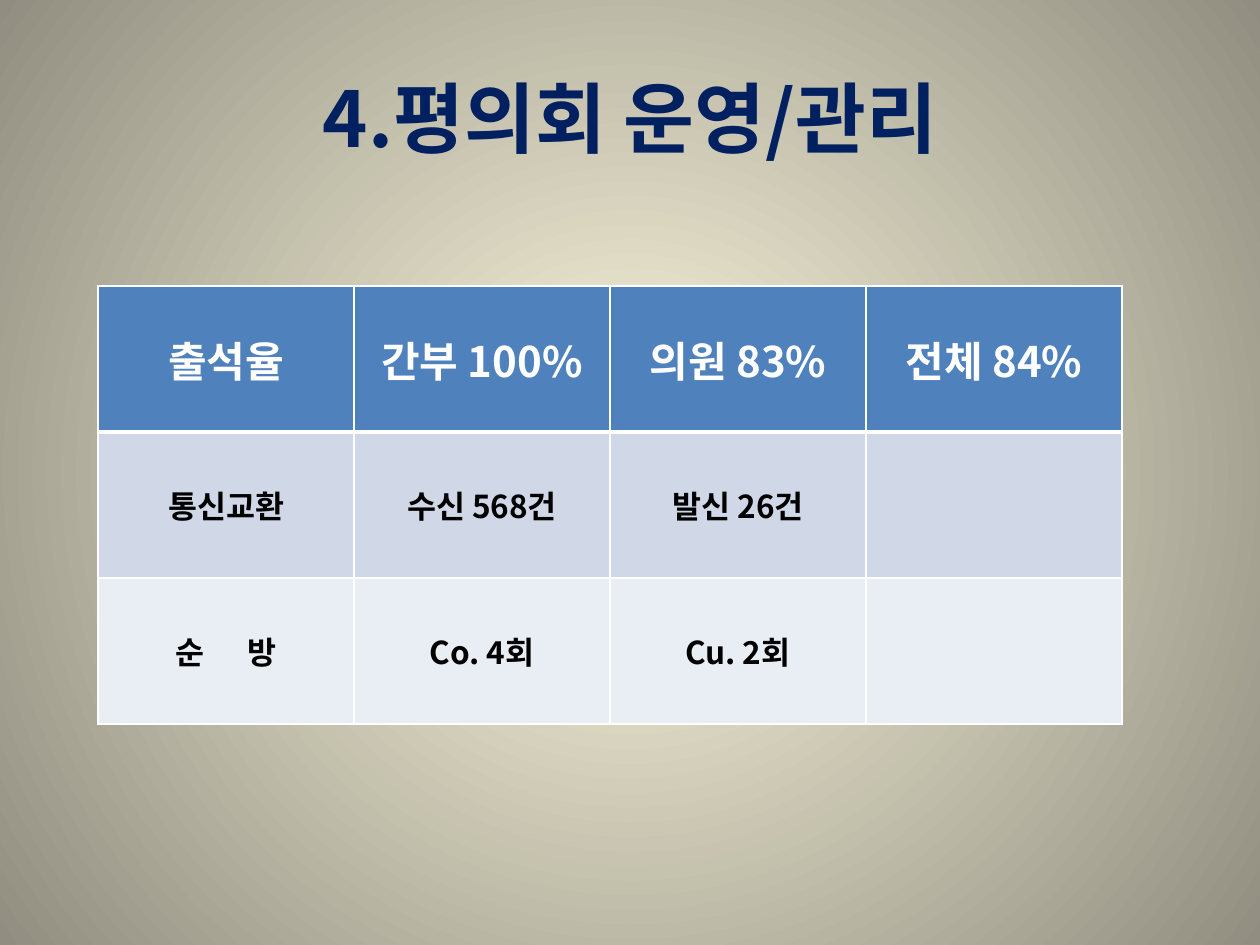
from dataclasses import dataclass

from lxml.etree import SubElement
from pptx import Presentation
from pptx.dml.color import RGBColor
from pptx.enum.text import MSO_ANCHOR, PP_ALIGN
from pptx.oxml.ns import qn
from pptx.util import Emu, Pt

FONT = "Noto Sans CJK KR"
NAVY = RGBColor(0x00, 0x20, 0x60)
BLUE = RGBColor(0x4F, 0x81, 0xBD)
PALE_BLUE = RGBColor(0xD0, 0xD8, 0xE8)
PALER_BLUE = RGBColor(0xE9, 0xED, 0xF4)
WHITE = RGBColor(0xFF, 0xFF, 0xFF)
BLACK = RGBColor(0x00, 0x00, 0x00)
CREAM = RGBColor(0xFC, 0xF7, 0xDD)
TAUPE = RGBColor(0x91, 0x8E, 0x81)

COLUMN_WIDTH, ROW_HEIGHT = 256, 146
WIDE_GAP = 20  # points added to the space inside a spread-out label


@dataclass(frozen=True)
class TextStyle:
    size: int
    color: RGBColor


@dataclass(frozen=True)
class TableRow:
    labels: tuple[str, ...]
    fill: RGBColor
    style: TextStyle
    top_border: int = 1
    bottom_border: int = 1


TITLE = TextStyle(44, NAVY)
HEADER = TextStyle(24, WHITE)
BODY = TextStyle(18, BLACK)

ROWS = (
    TableRow(("출석율", "간부 100%", "의원 83%", "전체 84%"), BLUE, HEADER, bottom_border=3),
    TableRow(("통신교환", "수신 568건", "발신 26건", ""), PALE_BLUE, BODY, top_border=3),
    TableRow(("순 방", "Co. 4회", "Cu. 2회", ""), PALER_BLUE, BODY),
)
SPREAD_LABELS = {"순 방"}


def px(length: int) -> Emu:
    return Emu(round(length * 914400 / 126))


def add_run(paragraph, text: str, style: TextStyle, spacing: int = 0) -> None:
    run = paragraph.add_run()
    run.text = text
    run.font.size = Pt(style.size)
    run.font.bold = True
    run.font.color.rgb = style.color
    run.font.name = FONT
    properties = run.font._element
    SubElement(properties, qn("a:ea")).set("typeface", FONT)
    if spacing:
        properties.set("spc", str(spacing * 100))


def write_label(paragraph, text: str, style: TextStyle) -> None:
    """Write centred text, widening the space in spread-out labels."""
    paragraph.alignment = PP_ALIGN.CENTER
    if text in SPREAD_LABELS:
        first, last = text.split()
        add_run(paragraph, first, style)
        add_run(paragraph, " ", style, WIDE_GAP)
        add_run(paragraph, last, style)
    elif text:
        add_run(paragraph, text, style)
    else:
        paragraph.font.size = Pt(style.size)


def set_borders(cell, row: TableRow) -> None:
    """Add white lines, which must come before the fill in the cell properties."""
    properties = cell._tc.get_or_add_tcPr()
    widths = {"L": 1, "R": 1, "T": row.top_border, "B": row.bottom_border}
    for side, width in widths.items():
        line = SubElement(properties, qn(f"a:ln{side}"), w=str(Pt(width)))
        solid = SubElement(line, qn("a:solidFill"))
        SubElement(solid, qn("a:srgbClr"), val=str(WHITE))


def set_radial_background(slide) -> None:
    fill = slide.background.fill
    fill.gradient()
    for stop, color, position in zip(fill.gradient_stops, (CREAM, TAUPE), (0, 1)):
        stop.color.rgb = color
        stop.position = position
    gradient = slide._element.find(".//" + qn("a:gradFill"))
    gradient.remove(gradient.find(qn("a:lin")))
    circle = SubElement(gradient, qn("a:path"), path="circle")
    SubElement(circle, qn("a:fillToRect"), l="50000", t="50000", r="50000", b="50000")


def add_title(slide, text: str) -> None:
    box = slide.shapes.add_textbox(px(63), px(38), px(1134), px(157))
    frame = box.text_frame
    frame.word_wrap = True
    frame.vertical_anchor = MSO_ANCHOR.MIDDLE
    write_label(frame.paragraphs[0], text, TITLE)


def add_council_table(slide) -> None:
    column_count = len(ROWS[0].labels)
    table = slide.shapes.add_table(
        len(ROWS), column_count, px(98), px(286),
        px(COLUMN_WIDTH * column_count), px(ROW_HEIGHT * len(ROWS)),
    ).table
    table.horz_banding = False
    for column in table.columns:
        column.width = px(COLUMN_WIDTH)
    for table_row, row in zip(table.rows, ROWS):
        table_row.height = px(ROW_HEIGHT)
        for cell, label in zip(table_row.cells, row.labels):
            set_borders(cell, row)
            cell.fill.solid()
            cell.fill.fore_color.rgb = row.fill
            cell.vertical_anchor = MSO_ANCHOR.MIDDLE
            write_label(cell.text_frame.paragraphs[0], label, row.style)


def main() -> None:
    presentation = Presentation()
    presentation.slide_width, presentation.slide_height = px(1260), px(945)
    slide = presentation.slides.add_slide(presentation.slide_layouts[6])
    set_radial_background(slide)
    add_title(slide, "4.평의회 운영/관리")
    add_council_table(slide)
    presentation.save("out.pptx")


if __name__ == "__main__":
    main()
